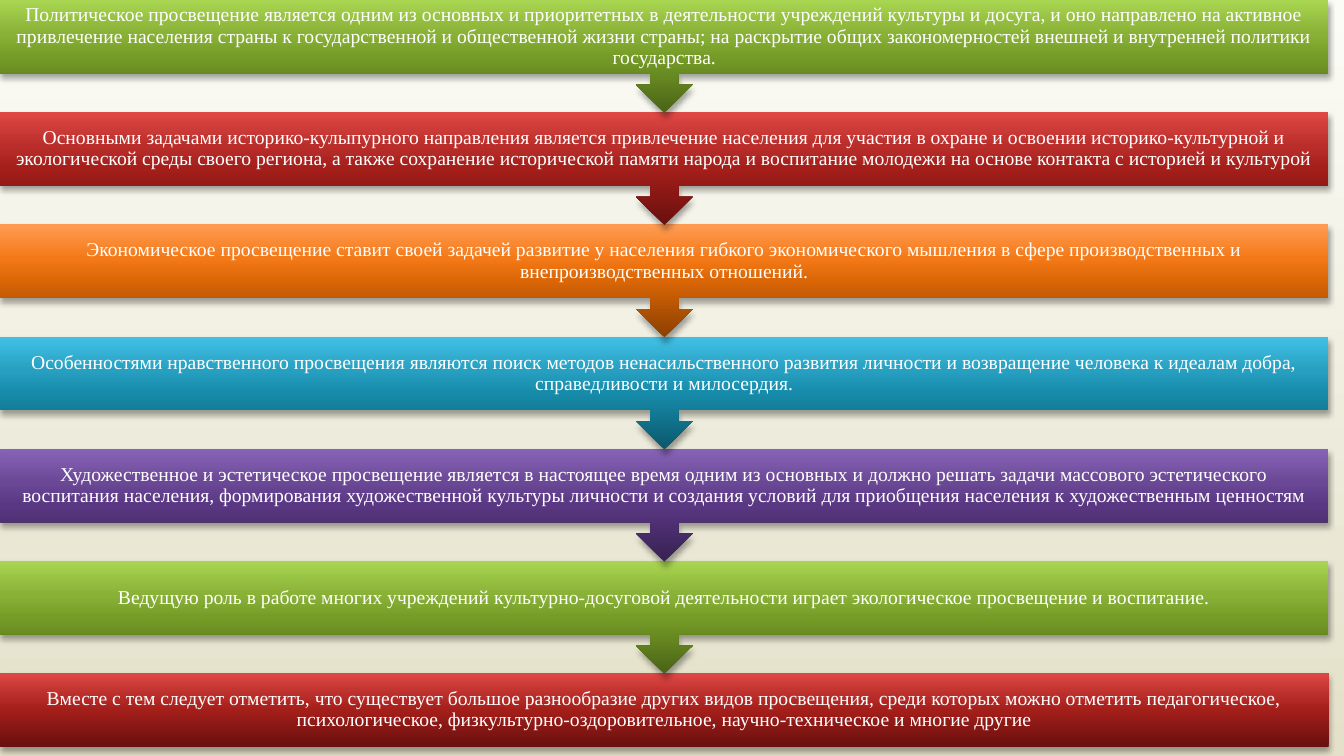
from dataclasses import dataclass

from lxml.etree import SubElement
from pptx import Presentation
from pptx.dml.color import RGBColor
from pptx.enum.shapes import MSO_SHAPE
from pptx.enum.text import MSO_ANCHOR, PP_ALIGN
from pptx.oxml.ns import qn
from pptx.util import Pt


@dataclass(frozen=True)
class Theme:
    font: str = "Times New Roman"
    size: int = 14
    text: str = "FFFFFF"
    shadow: str = "000000"
    background: tuple = ((0, "FBFCF6"), (100, "E4E0C9"))
    green: tuple = ((0, "4A6316"), (50, "769C27"), (70, "89B137"), (100, "A9D651"))
    red: tuple = ((0, "68100E"), (50, "A41E1A"), (70, "B92E2A"), (100, "DF4845"))
    orange: tuple = ((0, "8B3F00"), (50, "DA6606"), (70, "F47917"), (100, "FF9C54"))
    blue: tuple = ((0, "0B586C"), (50, "178BAA"), (70, "279FC0"), (100, "41C1E6"))
    violet: tuple = ((0, "372152"), (50, "593782"), (70, "6A4895"), (100, "8763B7"))


THEME = Theme()
BAND_WIDTH = 949
BAND_HEIGHT = 52.6
CALLOUT_HEIGHT = 80.6
PITCH = 80.15
INSET = 7.9

DIRECTIONS = (
    (THEME.green, "Политическое просвещение является одним из основных и приоритетных в деятельности "
     "учреждений культуры и досуга, и оно направлено на активное привлечение населения страны к "
     "государственной и общественной жизни страны; на раскрытие общих закономерностей внешней и "
     "внутренней политики государства."),
    (THEME.red, "Основными задачами историко-кулыпурного направления является привлечение населения "
     "для участия в охране и освоении историко-культурной и экологической среды своего региона, а "
     "также сохранение исторической памяти народа и воспитание молодежи на основе контакта с "
     "историей и культурой"),
    (THEME.orange, "Экономическое просвещение ставит своей задачей развитие у населения гибкого "
     "экономического мышления в сфере производственных и внепроизводственных отношений."),
    (THEME.blue, "Особенностями нравственного просвещения являются поиск методов ненасильственного "
     "развития личности и возвращение человека к идеалам добра, справедливости и милосердия."),
    (THEME.violet, "Художественное и эстетическое просвещение является в настоящее время одним из "
     "основных и должно решать задачи массового эстетического воспитания населения, формирования "
     "художественной культуры личности и создания условий для приобщения населения к "
     "художественным ценностям"),
    (THEME.green, "Ведущую роль в работе многих учреждений культурно-досуговой деятельности играет "
     "экологическое просвещение и воспитание."),
    (THEME.red, "Вместе с тем следует отметить, что существует большое разнообразие других видов "
     "просвещения, среди которых можно отметить педагогическое, психологическое, "
     "физкультурно-оздоровительное, научно-техническое и многие другие"),
)


def apply_gradient(fill, properties, stops, angle):
    fill.gradient()
    gradient = properties.find(qn("a:gradFill"))
    gradient.set("rotWithShape", "0")
    for child in list(gradient):
        gradient.remove(child)
    stop_list = SubElement(gradient, qn("a:gsLst"))
    for position, color in stops:
        stop = SubElement(stop_list, qn("a:gs"), pos=str(position * 1000))
        SubElement(stop, qn("a:srgbClr"), val=color)
    SubElement(gradient, qn("a:lin"), ang=str(angle * 60000), scaled="0")


def apply_shadow(shape):
    shape.shadow.inherit = False
    effects = shape.element.spPr.find(qn("a:effectLst"))
    shadow = SubElement(effects, qn("a:outerShdw"), blurRad=str(Pt(4)), dist=str(Pt(3)),
                        dir=str(90 * 60000), rotWithShape="0")
    color = SubElement(shadow, qn("a:srgbClr"), val=THEME.shadow)
    SubElement(color, qn("a:alpha"), val="35000")


def add_band(shapes, top, stops, is_last):
    kind = MSO_SHAPE.RECTANGLE if is_last else MSO_SHAPE.UP_ARROW_CALLOUT
    height = BAND_HEIGHT if is_last else CALLOUT_HEIGHT
    shape = shapes.add_shape(kind, Pt(0), Pt(top), Pt(BAND_WIDTH), Pt(height))
    shape.rotation = 0 if is_last else 180
    apply_gradient(shape.fill, shape.element.spPr, stops, 270)
    shape.line.fill.background()
    apply_shadow(shape)


def add_caption(shapes, top, text):
    box = shapes.add_textbox(Pt(0), Pt(top), Pt(BAND_WIDTH), Pt(BAND_HEIGHT))
    frame = box.text_frame
    frame.word_wrap = True
    frame.vertical_anchor = MSO_ANCHOR.MIDDLE
    frame.margin_left = frame.margin_right = Pt(INSET)
    frame.margin_top = frame.margin_bottom = Pt(INSET)
    paragraph = frame.paragraphs[0]
    paragraph.alignment = PP_ALIGN.CENTER
    paragraph.line_spacing = 0.9
    paragraph.space_after = Pt(5)
    run = paragraph.add_run()
    run.text = text
    run.font.name = THEME.font
    run.font.size = Pt(THEME.size)
    run.font.color.rgb = RGBColor.from_string(THEME.text)


def main():
    presentation = Presentation()
    presentation.slide_width = Pt(960)
    presentation.slide_height = Pt(540)
    slide = presentation.slides.add_slide(presentation.slide_layouts[6])
    background_fill = slide.background.fill
    background_fill.gradient()
    background_properties = slide.element.find(".//" + qn("p:bgPr"))
    apply_gradient(background_fill, background_properties, THEME.background, 90)

    group = slide.shapes.add_group_shape()
    last = len(DIRECTIONS) - 1
    for index, (stops, text) in reversed(list(enumerate(DIRECTIONS))):
        top = index * PITCH
        add_band(group.shapes, top, stops, index == last)
        add_caption(group.shapes, top, text)

    presentation.save("out.pptx")


if __name__ == "__main__":
    main()
